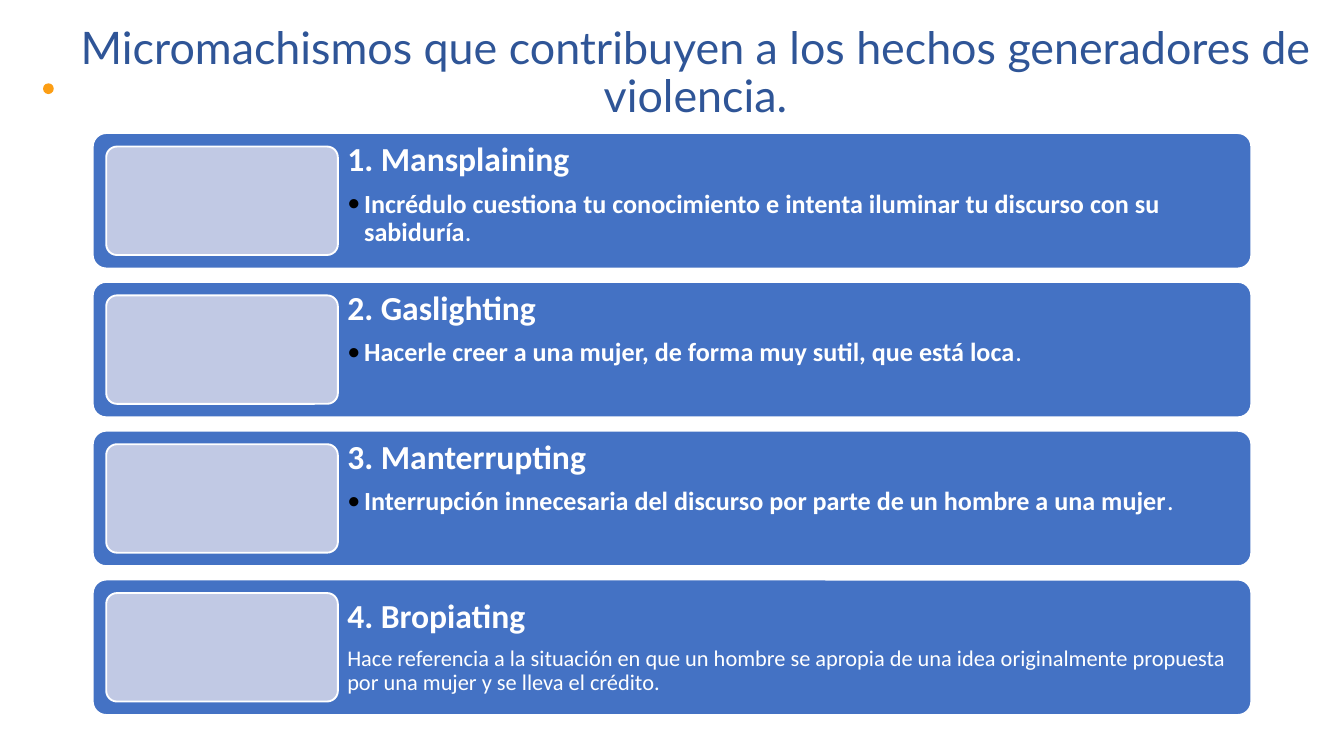
from lxml import etree
from pptx import Presentation
from pptx.dml.color import RGBColor
from pptx.enum.shapes import MSO_SHAPE
from pptx.enum.text import MSO_ANCHOR, PP_ALIGN
from pptx.oxml.ns import qn
from pptx.util import Inches, Pt

ROUNDED, OVAL = MSO_SHAPE.ROUNDED_RECTANGLE, MSO_SHAPE.OVAL
TOP, MIDDLE = MSO_ANCHOR.TOP, MSO_ANCHOR.MIDDLE
CENTER = PP_ALIGN.CENTER

WHITE = RGBColor(0xFF, 0xFF, 0xFF)
NAVY = RGBColor(0x2F, 0x55, 0x97)
BLUE = RGBColor(0x44, 0x72, 0xC4)
LAVENDER = RGBColor(0xC1, 0xC9, 0xE4)
ORANGE = RGBColor(0xFC, 0x9E, 0x14)

# Slide in the ratio 16:9 and its card column, in inches
SLIDE_W = 10
SLIDE_H = SLIDE_W * 9 / 16
LEFT, WIDTH = 0.69, 8.62
FIRST_TOP, LAST_BOTTOM, GAP = 0.99, 5.32, 0.1
PANEL_W = 0.2 * WIDTH

TITLE = "Micromachismos que contribuyen a los hechos generadores de violencia."
HEADING = {"name": "Calibri", "size": Pt(18), "bold": True}
STRONG = {"name": "Calibri", "size": Pt(14), "bold": True}
STOP = {"name": "Calibri", "size": Pt(14), "bold": False}
PLAIN = {"name": "Calibri", "size": Pt(12), "bold": False}

# Heading, runs of the description, bulleted, anchor
CARDS = [
    ("1. Mansplaining",
     [("Incrédulo cuestiona tu conocimiento e intenta iluminar tu discurso "
       "con su sabiduría", STRONG), (".", STOP)], True, TOP),
    ("2. Gaslighting",
     [("Hacerle creer a una mujer, de forma muy sutil, que está loca", STRONG),
      (".", STOP)], True, TOP),
    ("3. Manterrupting",
     [("Interrupción innecesaria del discurso por parte de un hombre a una "
       "mujer", STRONG), (".", STOP)], True, TOP),
    ("4. Bropiating",
     [("Hace referencia a la situación en que un hombre se apropia de una idea "
       "originalmente propuesta por una mujer y se lleva el crédito.", PLAIN)],
     False, MIDDLE),
]


def box(*lengths):
    return [Inches(v) for v in lengths]


def add_run(p, text, fmt, color):
    r = p.add_run()
    r.text = text
    for name, value in fmt.items():
        setattr(r.font, name, value)
    r.font.color.rgb = color


def add_bullet(p):
    """Give the paragraph a black bullet with a hanging indent."""
    pPr = p._p.get_or_add_pPr()
    pPr.set("marL", str(Pt(9)))
    pPr.set("indent", str(-Pt(9)))
    color = etree.SubElement(pPr, qn("a:buClr"))
    etree.SubElement(color, qn("a:srgbClr"), val="000000")
    etree.SubElement(pPr, qn("a:buFont"), typeface="Calibri")
    etree.SubElement(pPr, qn("a:buChar"), char="•")


def add_title(s):
    sp = s.shapes.title
    sp.left, sp.top, sp.width, sp.height = box(0.41, 0.14, 9.53, 0.85)
    tf = sp.text_frame
    tf.vertical_anchor = TOP
    p = tf.paragraphs[0]
    p.alignment, p.line_spacing = CENTER, 0.9
    add_run(p, TITLE, {"name": "Lato", "size": Pt(24)}, NAVY)


def add_filled(s, kind, lengths, color):
    sp = s.shapes.add_shape(kind, *box(*lengths))
    sp.shadow.inherit = False
    sp.fill.solid()
    sp.fill.fore_color.rgb = color
    sp.line.fill.background()
    return sp


def add_rounded(s, lengths, color):
    sp = add_filled(s, ROUNDED, lengths, color)
    sp.adjustments[0] = 0.1
    sp.line.color.rgb = WHITE
    sp.line.width = Pt(1)


def add_card_text(s, lengths, heading, runs, bulleted, anchor):
    tf = s.shapes.add_textbox(*box(*lengths)).text_frame
    tf.word_wrap = True
    tf.vertical_anchor = anchor
    for side in ("left", "top", "right", "bottom"):
        setattr(tf, f"margin_{side}", Inches(0.07))
    head, body = tf.paragraphs[0], tf.add_paragraph()
    for p in (head, body):
        p.line_spacing = 0.9
    head.space_after = Pt(6.3)
    add_run(head, heading, HEADING, WHITE)
    if bulleted:
        body.level = 1
        add_bullet(body)
    for text, fmt in runs:
        add_run(body, text, fmt, WHITE)


def add_card(s, top, height, card):
    text_left = LEFT + GAP + PANEL_W
    add_rounded(s, (LEFT, top, WIDTH, height), BLUE)
    add_card_text(s, (text_left, top, LEFT + WIDTH - text_left, height), *card)
    add_rounded(s, (LEFT + GAP, top + GAP, PANEL_W, height - 2 * GAP), LAVENDER)


def main():
    prs = Presentation()
    prs.slide_width, prs.slide_height = box(SLIDE_W, SLIDE_H)
    s = prs.slides.add_slide(prs.slide_layouts[5])
    add_title(s)
    add_filled(s, OVAL, (0.32, 0.62, 0.08, 0.08), ORANGE)
    pitch = (LAST_BOTTOM - FIRST_TOP + GAP) / len(CARDS)
    for i, card in enumerate(CARDS):
        add_card(s, FIRST_TOP + i * pitch, pitch - GAP, card)
    prs.save("out.pptx")


if __name__ == "__main__":
    main()
